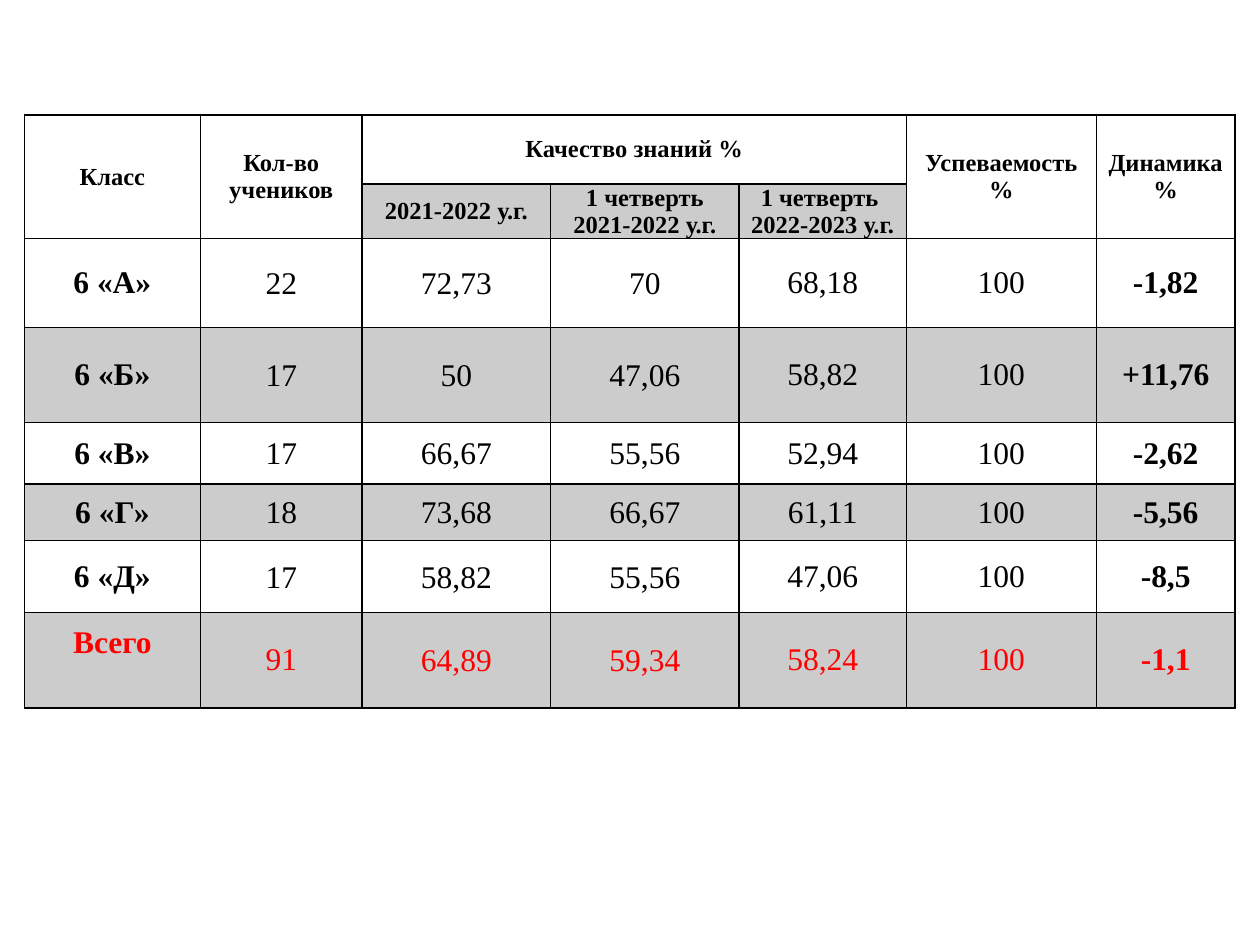
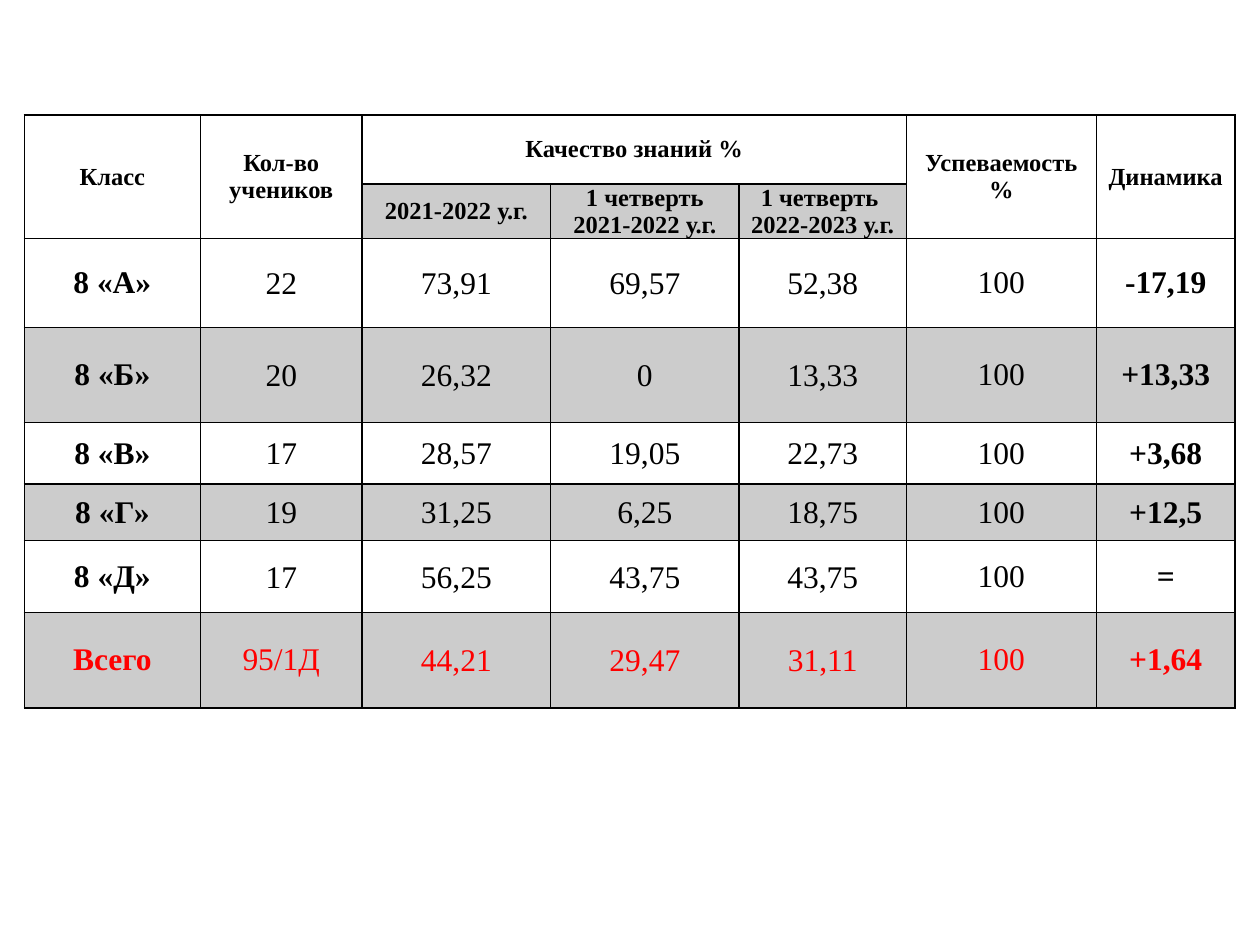
"""Build two slides of class results by quarter, one table each."""
from dataclasses import dataclass

from lxml.etree import SubElement
from pptx import Presentation
from pptx.dml.color import RGBColor as Rgb
from pptx.enum.text import MSO_ANCHOR as Anchor, PP_ALIGN as Align
from pptx.oxml.ns import qn
from pptx.util import Cm, Pt


@dataclass(frozen=True)
class Theme:
    font: str = "Times New Roman"
    ink: str = "000000"
    total: str = "FF0000"
    band_alpha: str = "20000"
    head_size: int = 14
    body_size: int = 18
    border: int = 1


theme = Theme()

column_widths = [3.55, 3.26, 3.8, 3.8, 3.37, 3.83, 2.8]
row_heights = [1.39, 1.1, 1.79, 1.92, 1.24, 1.14, 1.45, 1.92]
merges = [((0, 0), (1, 0)), ((0, 1), (1, 1)), ((0, 2), (0, 4)),
          ((0, 5), (1, 5)), ((0, 6), (1, 6))]
header = ["Класс", "Кол-во учеников", "Качество знаний %", "", "", "Успеваемость %"]
periods = ["", "", "2021-2022 у.г.", "1 четверть\n2021-2022 у.г.",
           "1 четверть \n2022-2023 у.г.", "", ""]

grades = [
    {"dynamics": "Динамика %", "last_tight": 3, "total_lift": 0.7, "rows": [
        ["6 «А»", "22", "72,73", "70", "68,18", "100", "-1,82"],
        ["6 «Б»", "17", "50", "47,06", "58,82", "100", "+11,76"],
        ["6 «В»", "17", "66,67", "55,56", "52,94", "100", "-2,62"],
        ["6 «Г»", "18", "73,68", "66,67", "61,11", "100", "-5,56"],
        ["6 «Д»", "17", "58,82", "55,56", "47,06", "100", "-8,5"],
        ["Всего", "91", "64,89", "59,34", "58,24", "100", "-1,1"],
    ]},
    {"dynamics": "Динамика", "last_tight": 4, "total_lift": 0, "rows": [
        ["8 «А»", "22", "73,91", "69,57", "52,38", "100", "-17,19"],
        ["8 «Б»", "20", "26,32", "0", "13,33", "100", "+13,33"],
        ["8 «В»", "17", "28,57", "19,05", "22,73", "100", "+3,68"],
        ["8 «Г»", "19", "31,25", "6,25", "18,75", "100", "+12,5"],
        ["8 «Д»", "17", "56,25", "43,75", "43,75", "100", "="],
        ["Всего", "95/1Д", "44,21", "29,47", "31,11", "100", "+1,64"],
    ]},
]


def paint_cell(cell, shaded):
    properties = cell._tc.get_or_add_tcPr()
    for side in ("lnL", "lnR", "lnT", "lnB"):
        line = SubElement(properties, qn(f"a:{side}"), w=str(Pt(theme.border)))
        SubElement(SubElement(line, qn("a:solidFill")), qn("a:srgbClr"), val=theme.ink)
    if not shaded:
        cell.fill.background()
        return
    cell.fill.solid()
    cell.fill.fore_color.rgb = Rgb.from_string(theme.ink)
    color = properties.find(qn("a:solidFill")).find(qn("a:srgbClr"))
    SubElement(color, qn("a:alpha"), val=theme.band_alpha)


def write_cell(cell, text, size, bold, color):
    para = cell.text_frame.paragraphs[0]
    para.text = text
    para.alignment = Align.CENTER
    for line_break in para._p.findall(qn("a:br")):
        SubElement(line_break, qn("a:rPr"), sz=str(size * 100))
    for span in para.runs:
        for name, value in {"name": theme.font, "size": Pt(size), "bold": bold}.items():
            setattr(span.font, name, value)
        span.font.color.rgb = Rgb.from_string(color)


deck = Presentation()
deck.slide_width, deck.slide_height = Cm(25.4), Cm(19.05)

for grade in grades:
    page = deck.slides.add_slide(deck.slide_layouts[6])
    lines = [header + [grade["dynamics"]], periods] + grade["rows"]
    total_row = len(lines) - 1
    table = page.shapes.add_table(
        len(row_heights), len(column_widths), Cm(0.49), Cm(2.32),
        Cm(sum(column_widths)), Cm(sum(row_heights))).table
    table.first_row = table.horz_banding = False
    for column, width in zip(table.columns, column_widths):
        column.width = Cm(width)
    for row, height in zip(table.rows, row_heights):
        row.height = Cm(height)

    for r, texts in enumerate(lines):
        for c, text in enumerate(texts):
            cell = table.cell(r, c)
            in_head = r < 2
            first_tight = 2 if r == total_row else 1
            tight = not in_head and first_tight <= c <= grade["last_tight"]
            side_margin = Cm(0.03 if tight else 0.18)
            cell_format = {
                "vertical_anchor": Anchor.MIDDLE,
                "margin_left": side_margin,
                "margin_right": side_margin,
                "margin_top": Cm(0.03 if tight else 0),
                "margin_bottom": Cm(grade["total_lift"] if (r, c) == (total_row, 0) else 0),
            }
            for name, value in cell_format.items():
                setattr(cell, name, value)
            paint_cell(cell, shaded=r % 2 == 1)
            write_cell(cell, text,
                       theme.head_size if in_head else theme.body_size,
                       in_head or c in (0, len(texts) - 1),
                       theme.total if r == total_row else theme.ink)

    for start, end in merges:
        table.cell(*start).merge(table.cell(*end))

deck.save("out.pptx")
